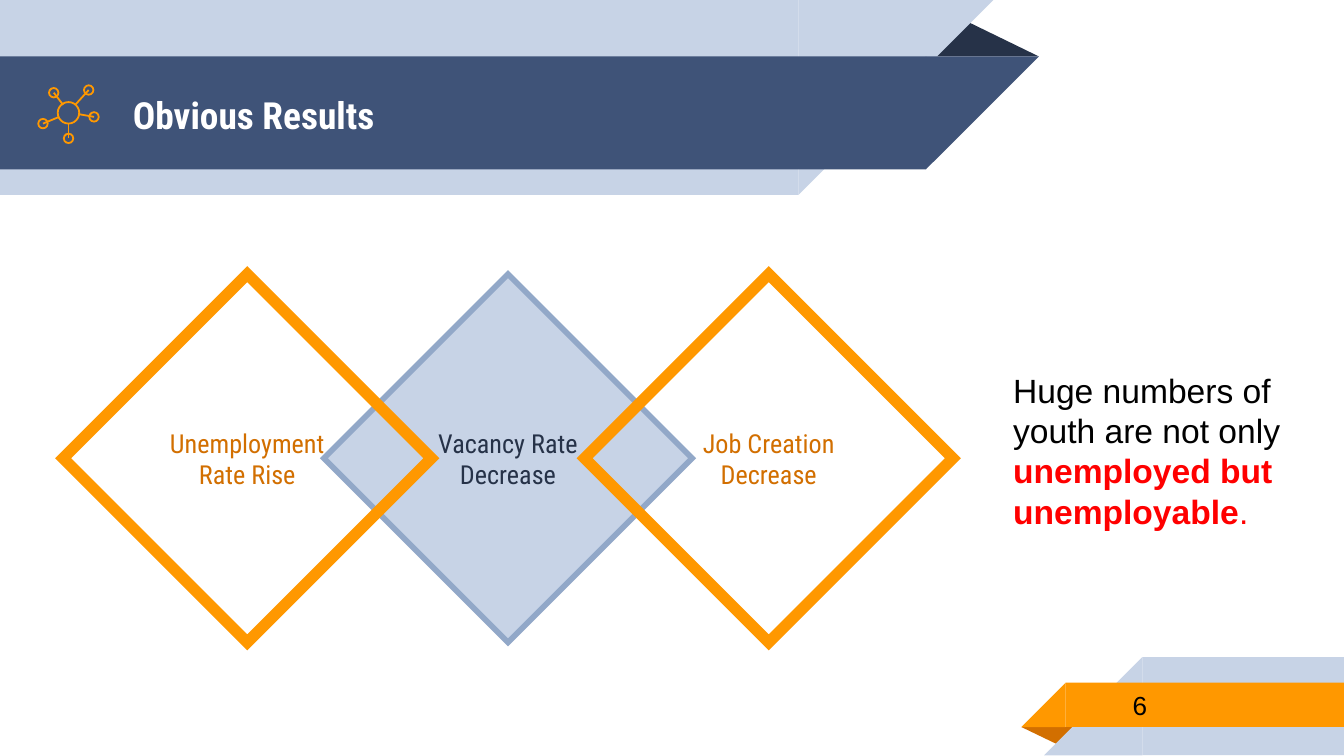
from dataclasses import dataclass

from lxml import etree
from pptx import Presentation
from pptx.dml.color import RGBColor
from pptx.enum import shapes, text
from pptx.oxml.ns import qn
from pptx.util import Inches, Pt

COLORS = {
    "pale": "C7D3E6", "navy": "3F5378", "dark": "263248", "steel": "92A8C8",
    "orange": "FF9800", "rust": "D26F00", "white": "FFFFFF",
    "black": "000000", "red": "FF0000",
}
KIND = shapes.MSO_SHAPE
HEADING_FONT, BODY_FONT = "Roboto Condensed", "Arial"
ICON_LINE = 0.96


@dataclass
class Band:
    """A bar that runs off one slide edge and ends in a slanted tip."""
    left: float
    top: float
    width: float
    height: float
    color: str


@dataclass
class Diamond:
    left: float
    lines: list[str]
    text_color: str
    line_color: str
    line_width: float
    fill: str | None = None


@dataclass
class Node:
    """A small icon circle and the point where its spoke meets the hub."""
    x: float
    y: float
    hub_x: float
    hub_y: float


HEADER_BANDS = [Band(0, 0, 5.94, 1.45, "pale"), Band(0, 0.42, 6.89, 0.84, "navy")]
FOOTER_BANDS = [Band(8.5, 4.89, 1.5, 0.73, "pale"), Band(7.93, 5.08, 2.07, 0.33, "orange")]
DIAMOND_TOP, DIAMOND_SIZE = 2.04, 2.74
DIAMONDS = [
    Diamond(2.41, ["Vacancy Rate", "Decrease"], "dark", "steel", 3, "pale"),
    Diamond(0.47, ["Unemployment Rate Rise"], "rust", "orange", 6),
    Diamond(4.35, ["Job Creation Decrease"], "rust", "orange", 6),
]
HUB_X, HUB_Y, HUB_SIZE, NODE_SIZE = 0.51, 0.84, 0.16, 0.07
NODES = [
    Node(0.66, 0.67, 0.56, 0.78), Node(0.4, 0.69, 0.47, 0.78),
    Node(0.32, 0.92, 0.44, 0.87), Node(0.51, 1.03, 0.51, 0.92),
    Node(0.7, 0.87, 0.59, 0.85),
]


def rgb(name: str) -> RGBColor:
    return RGBColor.from_string(COLORS[name])


def add_shape(s, kind, left: float, top: float, width: float, height: float,
              fill: str | None = None, line: str | None = None,
              line_width: float = 1, rotation: float = 0, flip: bool = False):
    sp = s.shapes.add_shape(kind, Inches(left), Inches(top), Inches(width), Inches(height))
    sp.shadow.inherit = False
    sp.rotation = rotation
    if flip:
        sp._element.spPr.find(qn("a:xfrm")).set("flipH", "1")
    if fill:
        sp.fill.solid()
        sp.fill.fore_color.rgb = rgb(fill)
    else:
        sp.fill.background()
    if line:
        sp.line.color.rgb = rgb(line)
        sp.line.width = Pt(line_width)
        miter = etree.SubElement(sp._element.spPr.find(qn("a:ln")), qn("a:miter"))
        miter.set("lim", "800000")
    else:
        sp.line.fill.background()
    return sp


def add_band(s, band: Band, rotation: float, tip_left: float) -> None:
    for kind, left, width in ((KIND.RECTANGLE, band.left, band.width),
                              (KIND.RIGHT_TRIANGLE, tip_left, band.height)):
        add_shape(s, kind, left, band.top, width, band.height, band.color,
                  rotation=rotation, flip=True)


def add_fold(s, left: float, top: float, width: float, height: float,
             color: str, rotation: float = 0) -> None:
    """Draw the shaded corner that makes a band look folded."""
    sp = add_shape(s, KIND.ISOSCELES_TRIANGLE, left, top, width, height, color,
                   rotation=rotation)
    sp.adjustments[0] = 0.324


def set_margins(tf, anchor) -> None:
    tf.word_wrap = True
    tf.vertical_anchor = anchor
    tf.margin_left = tf.margin_right = tf.margin_top = tf.margin_bottom = Inches(0.1)


def format_run(r, font: str, size: float, color: str, bold: bool = False) -> None:
    r.font.name = font
    r.font.size = Pt(size)
    r.font.bold = bold
    r.font.color.rgb = rgb(color)


def add_text(s, left: float, top: float, width: float, height: float,
             parts: list[tuple[str, str, bool]], font: str, size: float,
             anchor=text.MSO_ANCHOR.MIDDLE) -> None:
    """Add one paragraph made of (wording, colour, bold) parts."""
    tb = s.shapes.add_textbox(Inches(left), Inches(top), Inches(width), Inches(height))
    set_margins(tb.text_frame, anchor)
    p = tb.text_frame.paragraphs[0]
    for wording, color, bold in parts:
        r = p.add_run()
        r.text = wording
        format_run(r, font, size, color, bold)


def add_diamond(s, d: Diamond) -> None:
    sp = add_shape(s, KIND.DIAMOND, d.left, DIAMOND_TOP, DIAMOND_SIZE, DIAMOND_SIZE,
                   d.fill, d.line_color, d.line_width)
    tf = sp.text_frame
    set_margins(tf, text.MSO_ANCHOR.MIDDLE)
    tf.text = "\n".join(d.lines)
    for p in tf.paragraphs:
        p.alignment = text.PP_ALIGN.CENTER
        format_run(p.runs[0], HEADING_FONT, 14, d.text_color)


def add_ring(s, x: float, y: float, size: float) -> None:
    add_shape(s, KIND.OVAL, x - size / 2, y - size / 2, size, size,
              line="orange", line_width=ICON_LINE)


def add_network_icon(s) -> None:
    add_ring(s, HUB_X, HUB_Y, HUB_SIZE)
    for n in NODES:
        add_ring(s, n.x, n.y, NODE_SIZE)
        c = s.shapes.add_connector(shapes.MSO_CONNECTOR.STRAIGHT, Inches(n.x), Inches(n.y),
                                   Inches(n.hub_x), Inches(n.hub_y))
        c.line.color.rgb = rgb("orange")
        c.line.width = Pt(ICON_LINE)
        etree.SubElement(c._element.spPr, qn("a:effectLst"))


def main() -> None:
    prs = Presentation()
    prs.slide_width = Inches(10)
    prs.slide_height = Inches(10 * 9 / 16)
    s = prs.slides.add_slide(prs.slide_layouts[6])

    add_fold(s, 6.88, 0.14, 0.85, 0.28, "dark")
    for band in HEADER_BANDS:
        add_band(s, band, 180, band.left + band.width)
    add_fold(s, 7.6, 5.41, 0.43, 0.14, "rust", 180)
    for band in FOOTER_BANDS:
        add_band(s, band, 0, band.left - band.height)

    add_text(s, 0.89, 0.43, 5.75, 0.84, [("Obvious Results", "white", True)],
             HEADING_FONT, 20)
    add_text(s, 8.33, 5.07, 1.63, 0.35, [("6", "black", False)], BODY_FONT, 14)
    for d in DIAMONDS:
        add_diamond(s, d)
    add_network_icon(s)
    add_text(s, 7.44, 2.65, 2.24, 1.53,
             [("Huge numbers of youth are not only ", "black", False),
              ("unemployed but unemployable", "red", True), (".", "red", False)],
             BODY_FONT, 18, text.MSO_ANCHOR.TOP)
    prs.save("out.pptx")


if __name__ == "__main__":
    main()
